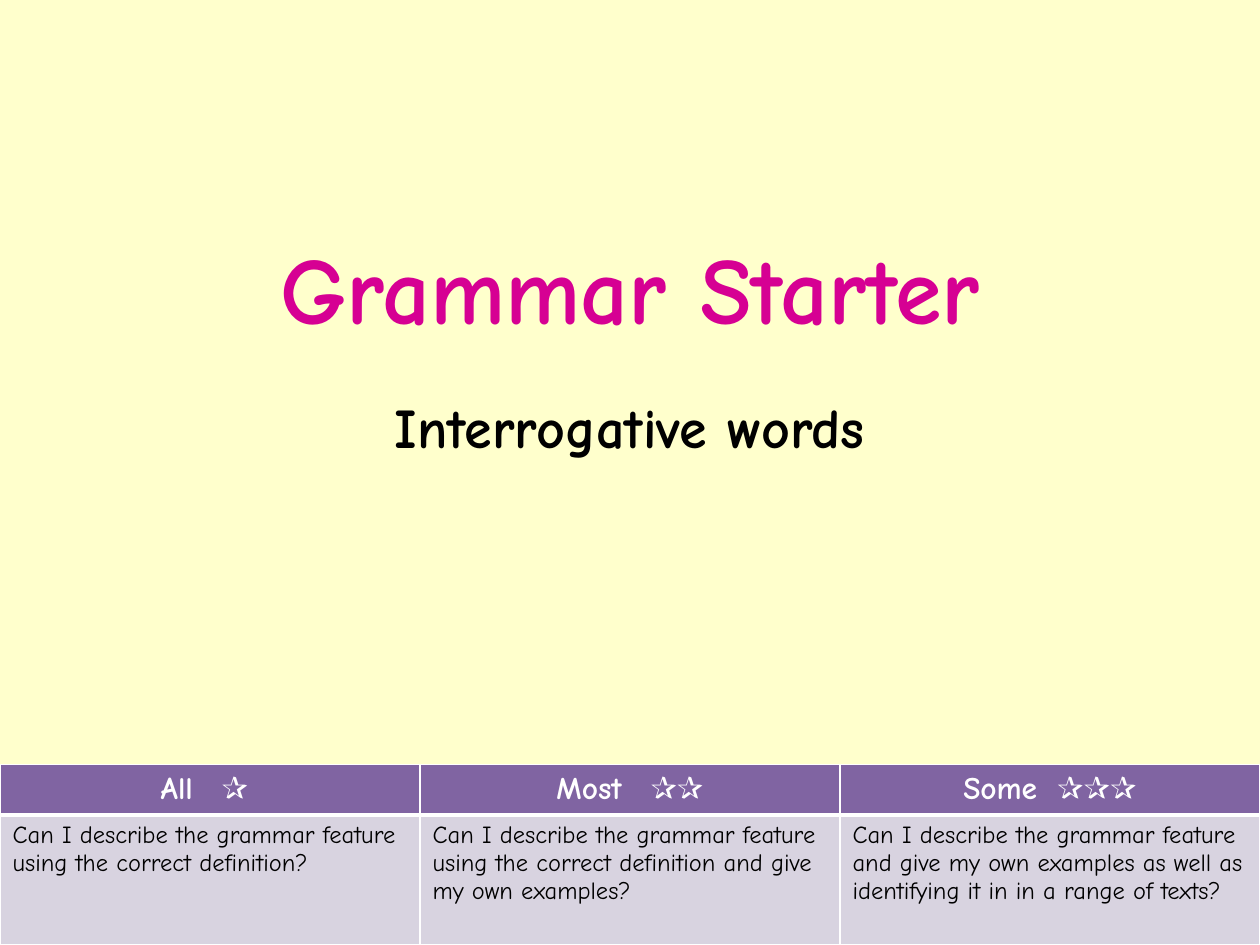
import pptx
import pptx.util
import pptx.dml.color
import pptx.enum.text
import lxml.etree

Pt = pptx.util.Pt
RGB = pptx.dml.color.RGBColor.from_string
ALIGN = pptx.enum.text.PP_ALIGN
ANCHOR = pptx.enum.text.MSO_ANCHOR
HUES = {"page": "FFFFCC", "title": "D60093", "ink": "000000",
        "white": "FFFFFF", "head": "8064A2", "body": "D8D3E0"}
NS = "http://schemas.openxmlformats.org/drawingml/2006/main"


def write(frame, *parts, size, hue="ink", bold=False, align=ALIGN.LEFT, gap=0):
    """Write parts as runs of one paragraph; gap widens a lone space."""
    frame.word_wrap = True
    para = frame.paragraphs[0]
    para.alignment = align
    for part in parts:
        run = para.add_run()
        run.text = part
        run.font.name = "Comic Neue"
        run.font.size = Pt(size)
        run.font.bold = bold
        run.font.color.rgb = RGB(HUES[hue])
        if part == " " and gap:
            run._r.get_or_add_rPr().set("spc", str(gap * 100))


def edge(cell, side, width):
    """Draw one white border of a cell."""
    props = cell._tc.get_or_add_tcPr()
    line = lxml.etree.SubElement(props, f"{{{NS}}}ln{side}", w=str(Pt(width)))
    fill = lxml.etree.SubElement(line, f"{{{NS}}}solidFill")
    lxml.etree.SubElement(fill, f"{{{NS}}}srgbClr", val=HUES["white"])


deck = pptx.Presentation()
deck.slide_width, deck.slide_height = Pt(720), Pt(540)
slide = deck.slides.add_slide(deck.slide_layouts[6])
slide.background.fill.solid()
slide.background.fill.fore_color.rgb = RGB(HUES["page"])

title = slide.shapes.add_textbox(Pt(54), Pt(106), Pt(612), Pt(116)).text_frame
title.vertical_anchor = ANCHOR.MIDDLE
write(title, "Grammar Starter", size=54, hue="title", bold=True,
      align=ALIGN.CENTER)

topic = slide.shapes.add_textbox(Pt(0), Pt(220.5), Pt(720), Pt(138)).text_frame
write(topic, "Interrogative words", size=32, bold=True, align=ALIGN.CENTER)
topic.paragraphs[0].space_before = Pt(6.4)

goals = [
    ("All", "\u2730 ", 10,
     "Can I describe the grammar feature using the correct definition?"),
    ("Most", "\u2730\u2730", 10,
     "Can I describe the grammar feature using the correct definition "
     "and give my own examples?"),
    ("Some", "\u2730\u2730\u2730", 5,
     "Can I describe the grammar feature and give my own examples "
     "as well as identifying it in in a range of texts?"),
]
table = slide.shapes.add_table(2, len(goals), Pt(0), Pt(437), Pt(720),
                               Pt(98)).table
table.rows[0].height, table.rows[1].height = Pt(24), Pt(74)

for col, (group, stars, gap, goal) in enumerate(goals):
    table.columns[col].width = Pt(720 / len(goals))
    head, body = table.cell(0, col), table.cell(1, col)
    write(head.text_frame, group, " ", stars, size=18, hue="white", bold=True,
          align=ALIGN.CENTER, gap=gap)
    write(body.text_frame, goal, size=14)
    for cell, hue, top, base in ((head, "head", 1, 3), (body, "body", 3, 1)):
        for side, width in zip("LRTB", (1, 1, top, base)):
            edge(cell, side, width)
        cell.fill.solid()
        cell.fill.fore_color.rgb = RGB(HUES[hue])

deck.save("out.pptx")
